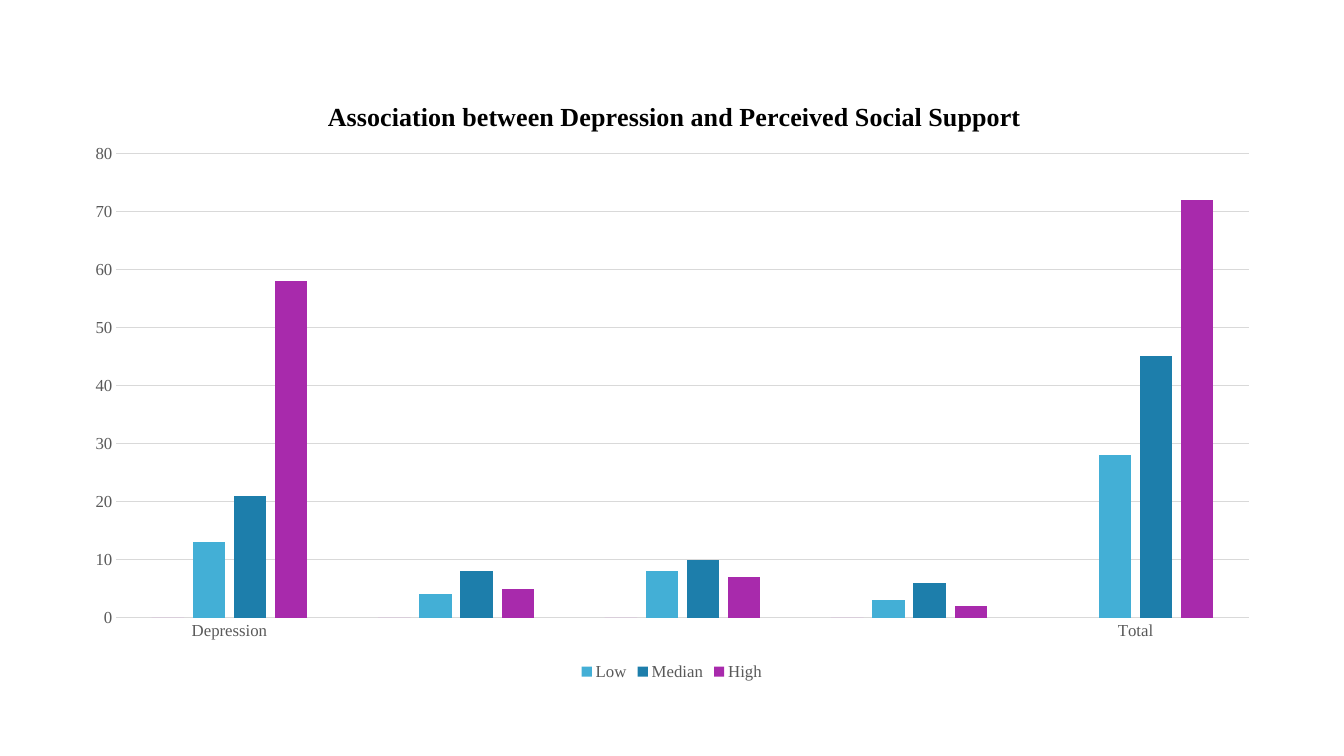
from dataclasses import dataclass

import lxml.etree
import pptx
import pptx.chart.data
import pptx.dml.color
import pptx.enum.chart
import pptx.oxml
import pptx.oxml.ns
import pptx.util

Cm = pptx.util.Cm
Pt = pptx.util.Pt
qn = pptx.oxml.ns.qn


def rgb(value):
    return pptx.dml.color.RGBColor.from_string(value)


@dataclass(frozen=True)
class Theme:
    face: str = "Times New Roman"
    background: str = "FFFFFF"
    title_color: str = "000000"
    label_color: str = "595959"
    line_color: str = "D9D9D9"
    series_colors: tuple = ("DE85E1", "43AFD6", "1D7EAB", "A82AAC")
    title_size: float = 18.6
    label_size: float = 12
    line_width: float = 0.75


TITLE = "Association between Depression and Perceived Social Support"
LEVELS = ["Depression", "", "", "", "Total"]
SUPPORT = {
    "Series 1": [0, 0, 0, 0, None],
    "Low": [13, 4, 8, 3, 28],
    "Median": [21, 8, 10, 6, 45],
    "High": [58, 5, 7, 2, 72],
}


def set_values(target, values):
    for name, value in values.items():
        setattr(target, name, value)


def place(parent, index, **layout):
    """Give a chart part a fixed place, as fractions of the chart area."""
    for old in parent.findall(qn("c:layout")):
        parent.remove(old)
    holder = parent.makeelement(qn("c:layout"), {})
    parent.insert(index, holder)
    manual = lxml.etree.SubElement(holder, qn("c:manualLayout"))
    for name, value in layout.items():
        lxml.etree.SubElement(manual, qn("c:" + name), val=str(value))


class PageBuilder:
    def __init__(self, page, theme):
        self.page = page
        self.theme = theme
        fill = page.background.fill
        fill.solid()
        fill.fore_color.rgb = rgb(theme.background)

    def format_font(self, font, color, size, bold=False):
        set_values(font, {"name": self.theme.face, "size": Pt(size), "bold": bold})
        font.color.rgb = rgb(color)

    def label_font(self, font):
        self.format_font(font, self.theme.label_color, self.theme.label_size)

    def format_line(self, line):
        line.color.rgb = rgb(self.theme.line_color)
        line.width = Pt(self.theme.line_width)

    def column_chart(self, frame, categories, series):
        data = pptx.chart.data.CategoryChartData()
        data.categories = categories
        for name, values in series.items():
            data.add_series(name, values)
        kind = pptx.enum.chart.XL_CHART_TYPE.COLUMN_CLUSTERED
        chart = self.page.shapes.add_chart(kind, *map(Cm, frame), data).chart
        self.label_font(chart.font)
        plot = chart.plots[0]
        set_values(plot, {"gap_width": 219, "overlap": -27, "vary_by_categories": False})
        for bars, color in zip(plot.series, self.theme.series_colors):
            bars.invert_if_negative = False
            bars.format.fill.solid()
            bars.format.fill.fore_color.rgb = rgb(color)
        plot_area = chart._chartSpace.chart.plotArea
        place(plot_area, 0, layoutTarget="inner", xMode="edge", yMode="edge",
              x=0.038, y=0.135, w=0.942, h=0.756)
        return chart

    def chart_title(self, chart, text):
        chart.has_title = True
        para = chart.chart_title.text_frame.paragraphs[0]
        span = para.add_run()
        span.text = text
        self.format_font(span.font, self.theme.title_color, self.theme.title_size, True)
        place(chart.chart_title._element, 1, xMode="edge", yMode="edge", x=0.21, y=0.04)

    def axes(self, chart, top, step):
        no_tick = pptx.enum.chart.XL_TICK_MARK.NONE
        for axis in (chart.category_axis, chart.value_axis):
            set_values(axis, {"major_tick_mark": no_tick, "minor_tick_mark": no_tick})
            self.label_font(axis.tick_labels.font)
        self.format_line(chart.category_axis.format.line)
        value_axis = chart.value_axis
        set_values(value_axis, {"minimum_scale": 0, "maximum_scale": top,
                                "major_unit": step, "has_major_gridlines": True})
        value_axis.format.line.fill.background()
        self.format_line(value_axis.major_gridlines.format.line)

    def legend(self, chart, hidden):
        """Add a legend at the bottom without the entry of one series."""
        chart.has_legend = True
        set_values(chart.legend, {
            "position": pptx.enum.chart.XL_LEGEND_POSITION.BOTTOM,
            "include_in_layout": False,
        })
        self.label_font(chart.legend.font)
        element = chart.legend._element
        entry = element.makeelement(qn("c:legendEntry"), {})
        element.insert(1, entry)
        lxml.etree.SubElement(entry, qn("c:idx"), val=str(hidden))
        lxml.etree.SubElement(entry, qn("c:delete"), val="1")


def main():
    deck = pptx.Presentation()
    set_values(deck, {"slide_width": Cm(33.87), "slide_height": Cm(19.05)})
    blank = deck.slide_layouts[6]
    builder = PageBuilder(deck.slides.add_slide(blank), Theme())
    chart = builder.column_chart((1.78, 1.78, 30.3, 15.47), LEVELS, SUPPORT)
    builder.chart_title(chart, TITLE)
    builder.axes(chart, top=80, step=10)
    builder.legend(chart, hidden=0)
    deck.save("out.pptx")


if __name__ == "__main__":
    main()
